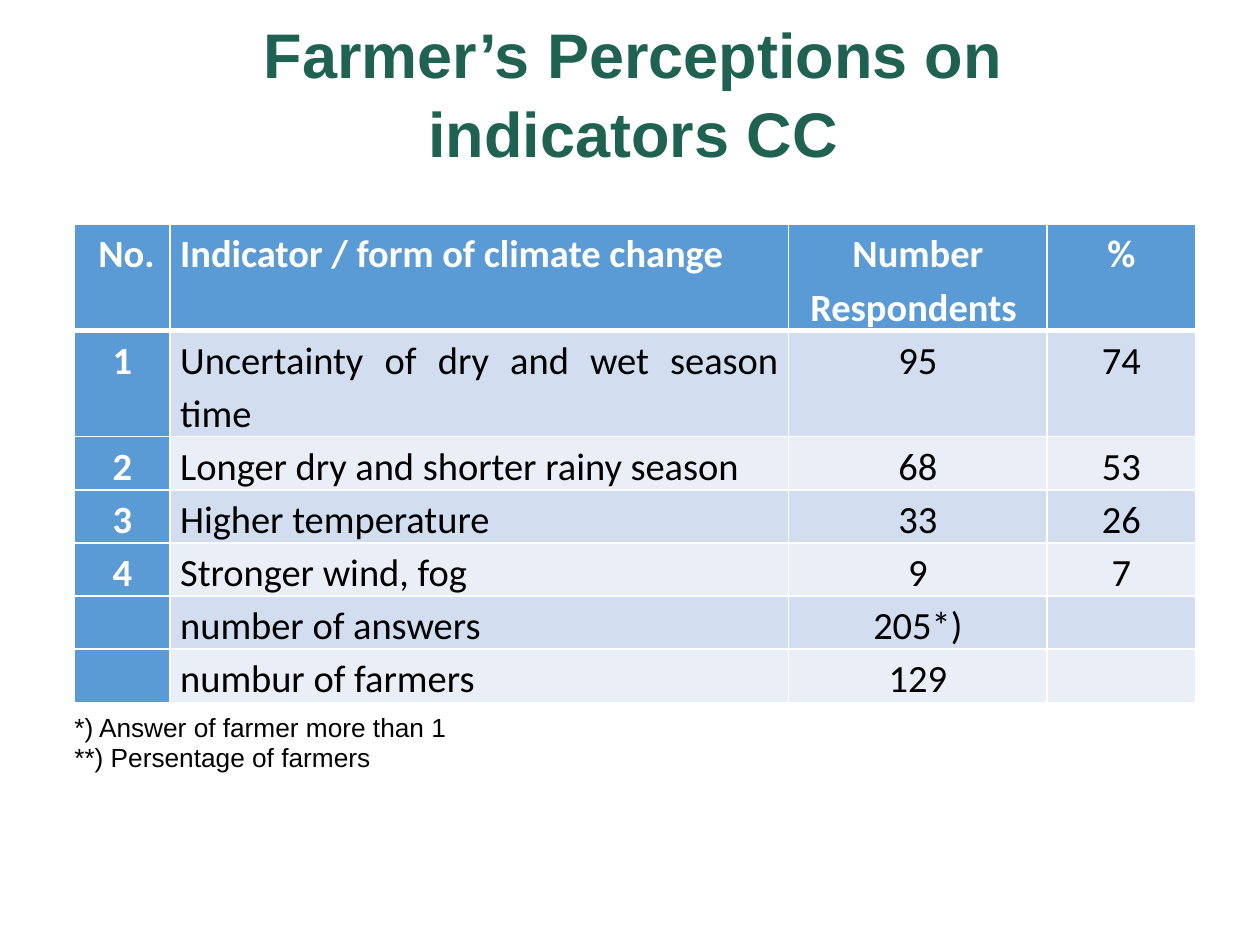
from dataclasses import dataclass

from lxml import etree
from pptx import Presentation
from pptx.dml.color import RGBColor
from pptx.enum import text as t
from pptx.oxml import ns
from pptx.util import Inches, Pt


@dataclass(frozen=True)
class Theme:
    green: str = "206252"
    blue: str = "5B9BD5"
    bands: tuple = ("D2DEEF", "EAEFF7")
    white: str = "FFFFFF"
    black: str = "000000"
    head: str = "Arial"
    body: str = "Calibri"
    title: int = 36
    cell: int = 22
    note: int = 15


THEME = Theme()
LEFT, CENTER, FULL = t.PP_ALIGN.LEFT, t.PP_ALIGN.CENTER, t.PP_ALIGN.JUSTIFY

COLS = [0.76, 4.91, 2.05, 1.18]
ROWS = [0.84, 0.84] + [0.42] * 5
DATA = [
    (" No.", "Indicator / form of climate change", "Number Respondents ", "%"),
    ("1", "Uncertainty of dry and wet season time", "95", "74"),
    ("2", "Longer dry and shorter rainy season", "68", "53"),
    ("3", "Higher temperature", "33", "26"),
    ("4", "Stronger wind, fog", "9", "7"),
    ("", "number of answers", "205*)", ""),
    ("", "numbur of farmers", "129", ""),
]


def style(para, face, size, color, bold=False, align=LEFT, gap=1.0):
    para.alignment = align
    para.line_spacing = gap
    font = para.font
    font.name, font.size, font.bold = face, Pt(size), bold
    font.color.rgb = RGBColor.from_string(color)


def add_text(slide, box, lines, pad, anchor, **look):
    frame = slide.shapes.add_textbox(*map(Inches, box)).text_frame
    frame.word_wrap = True
    frame.vertical_anchor = anchor
    side, top, base = pad
    frame.margin_left = frame.margin_right = Inches(side)
    frame.margin_top, frame.margin_bottom = Inches(top), Inches(base)
    frame.text = "\n".join(lines)
    for para in frame.paragraphs:
        style(para, THEME.head, **look)
    return frame


def add_edge(cell, side, width):
    props = cell._tc.get_or_add_tcPr()
    line = etree.SubElement(props, ns.qn(f"a:ln{side}"), w=str(Pt(width)))
    fill = etree.SubElement(line, ns.qn("a:solidFill"))
    etree.SubElement(fill, ns.qn("a:srgbClr"), val=THEME.white)


def fill_cell(cell, row, col, words):
    # Edges: the rule below the header is heavier
    for side in "LRTB":
        heavy = (row, side) in ((0, "B"), (1, "T"))
        add_edge(cell, side, 3 if heavy else 1)

    # Header row and first column share one look
    key = row == 0 or col == 0
    cell.fill.solid()
    cell.fill.fore_color.rgb = RGBColor.from_string(
        THEME.blue if key else THEME.bands[(row - 1) % 2])
    cell.margin_left = cell.margin_right = Inches(0.08)
    cell.margin_top = cell.margin_bottom = 0

    cell.text = words
    align = CENTER if col != 1 else FULL if row else LEFT
    style(cell.text_frame.paragraphs[0], THEME.body, THEME.cell,
          THEME.white if key else THEME.black, key, align, 1.15)


def add_grid(slide, left, top):
    size = map(Inches, (left, top, sum(COLS), sum(ROWS)))
    table = slide.shapes.add_table(len(ROWS), len(COLS), *size).table
    table.first_col = True
    for col, width in zip(table.columns, COLS):
        col.width = Inches(width)
    for row, height in zip(table.rows, ROWS):
        row.height = Inches(height)
    for r, line in enumerate(DATA):
        for c, words in enumerate(line):
            fill_cell(table.cell(r, c), r, c, words)


def main():
    deck = Presentation()
    deck.slide_width, deck.slide_height = Inches(10), Inches(7.5)
    slide = deck.slides.add_slide(deck.slide_layouts[6])

    # Title
    add_text(slide, (0.9, 0.44, 8.25, 0.93),
             ["Farmer’s Perceptions on indicators CC"],
             (0.1, 0.05, 0.02), t.MSO_ANCHOR.BOTTOM, size=THEME.title,
             color=THEME.green, bold=True, align=CENTER, gap=1.05)

    # Survey table
    add_grid(slide, 0.59, 1.78)

    # Footnotes
    notes = add_text(slide, (0.59, 5.64, 8.25, 0.68),
                     ["*) Answer of farmer more than 1",
                      "**) Persentage of farmers"],
                     (0, 0.05, 0.05), t.MSO_ANCHOR.TOP, size=THEME.note,
                     color=THEME.black, gap=0.8)
    for para in notes.paragraphs:
        para.space_before = Pt(3)

    deck.save("out.pptx")


if __name__ == "__main__":
    main()
